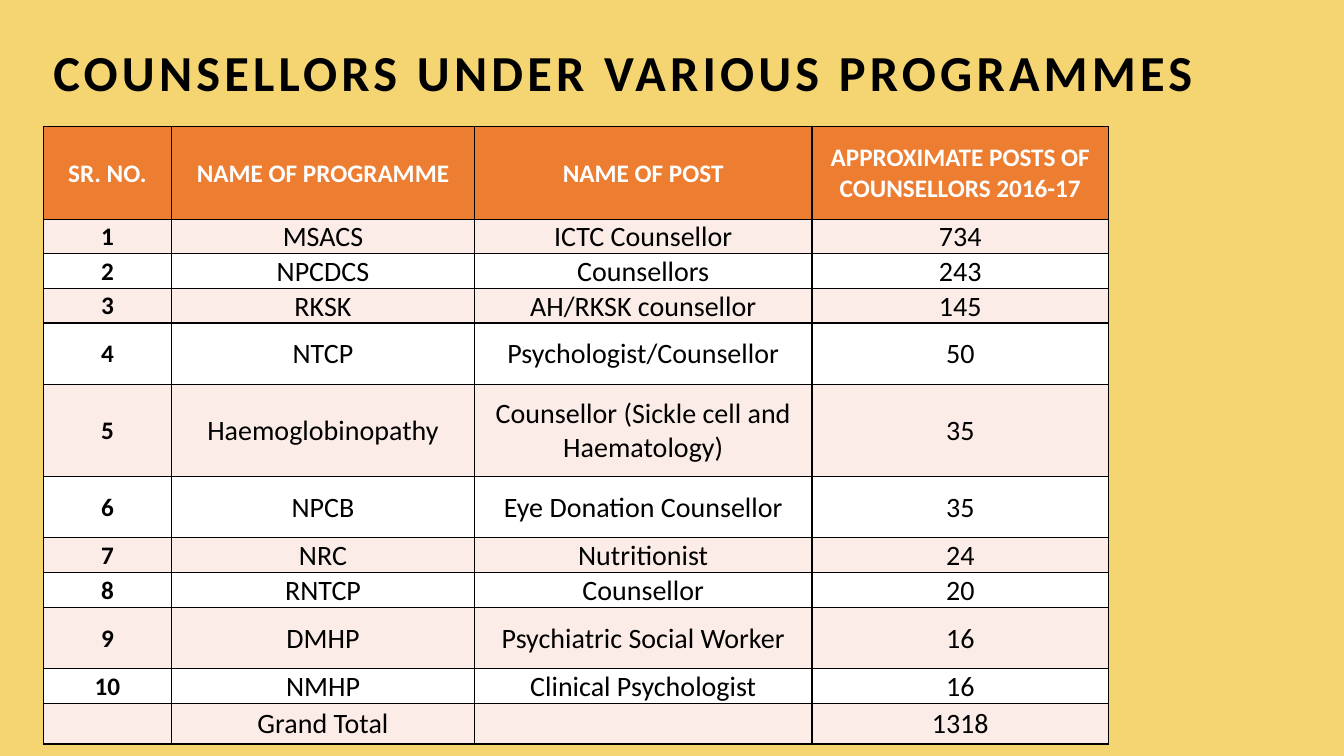
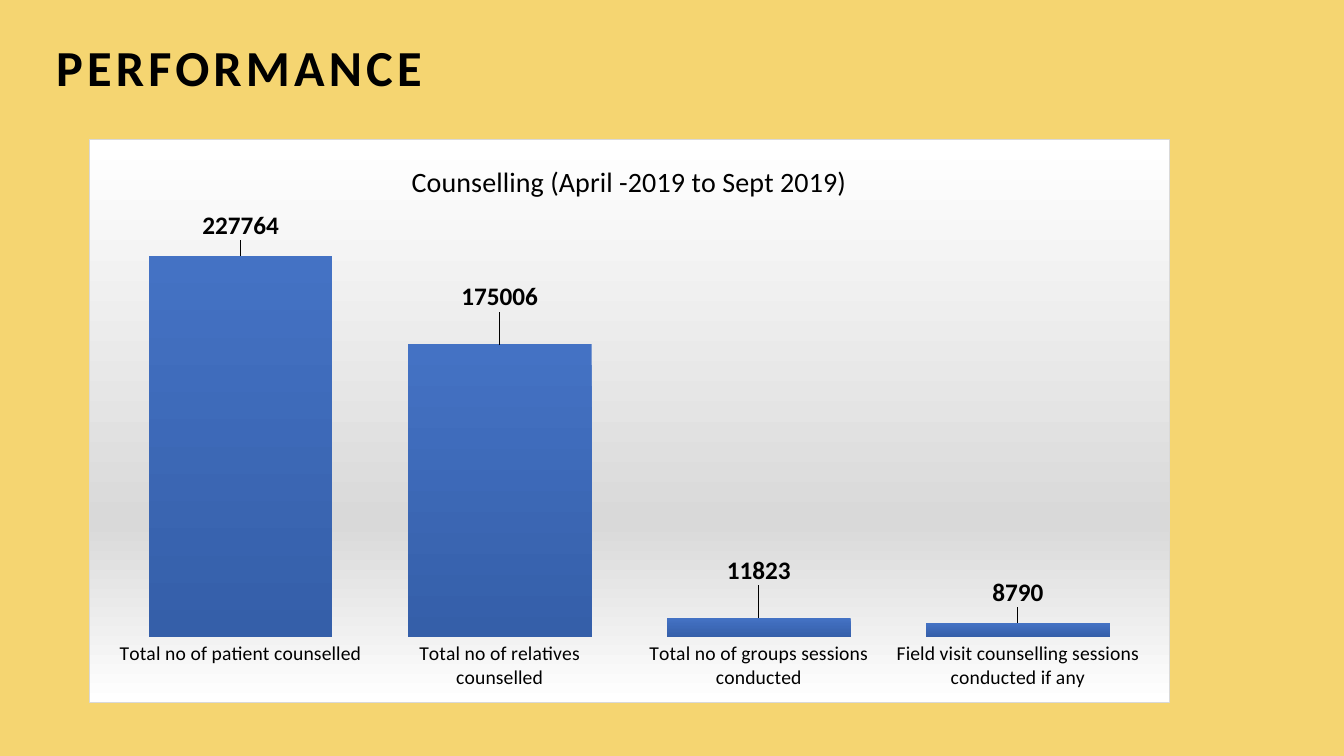
from lxml.etree import SubElement
from pptx import Presentation
from pptx.chart.data import CategoryChartData
from pptx.dml.color import RGBColor
from pptx.enum.chart import XL_CHART_TYPE, XL_LABEL_POSITION, XL_TICK_LABEL_POSITION, XL_TICK_MARK
from pptx.enum.text import MSO_ANCHOR, PP_ALIGN
from pptx.oxml import parse_xml
from pptx.oxml.ns import nsdecls, qn
from pptx.util import Pt

FONT = "Calibri"
COLORS = {
    "background": "F5D571", "text": "000000", "white": "FFFFFF",
    "header": "ED7D31", "band": "FCECE8",
    "bar_top": "4472C4", "bar_bottom": "355FA9", "grey": "D9D9D9",
}

PROGRAMMES_TITLE = "COUNSELLORS UNDER VARIOUS PROGRAMMES"
HEADER = ("SR. NO.", "NAME OF PROGRAMME", "NAME OF POST",
          "APPROXIMATE POSTS OF COUNSELLORS 2016-17")
PROGRAMMES = [
    ("1", "MSACS", "ICTC Counsellor", "734"),
    ("2", "NPCDCS", "Counsellors", "243"),
    ("3", "RKSK", "AH/RKSK counsellor", "145"),
    ("4", "NTCP", "Psychologist/Counsellor", "50"),
    ("5", "Haemoglobinopathy", "Counsellor (Sickle cell and Haematology)", "35"),
    ("6", "NPCB", "Eye Donation Counsellor", "35"),
    ("7", "NRC", "Nutritionist", "24"),
    ("8", "RNTCP", "Counsellor", "20"),
    ("9", "DMHP", "Psychiatric Social Worker", "16"),
    ("10", "NMHP", "Clinical Psychologist", "16"),
    ("", "Grand Total", "", "1318"),
]
COLUMN_WIDTHS = (91.5, 216.5, 241, 212)
ROW_HEIGHTS = (66, 22.5, 22.5, 22.5, 44, 65.5, 44, 22.5, 22.5, 44, 22.5, 29)

PERFORMANCE_TITLE = "PERFORMANCE"
CHART_TITLE = "Counselling (April -2019 to Sept 2019)"
# category, value, vertical label shift as a share of the chart height
COUNSELLING = [
    ("Total no of patient counselled", 227764, -0.02),
    ("Total no of relatives counselled", 175006, -0.05),
    ("Total no of groups sessions conducted", 11823, -0.05),
    ("Field visit counselling sessions conducted if any", 8790, -0.02),
]


def rgb(name):
    return RGBColor.from_string(COLORS[name])


def set_font(font, size, color="text", bold=False):
    font.name, font.size, font.bold = FONT, Pt(size), bold
    font.color.rgb = rgb(color)


def write_text(tf, text, size=20, color="text", bold=False, align=None, spacing=None):
    p = tf.paragraphs[0]
    p.alignment = align
    r = p.add_run()
    r.text = text
    set_font(r.font, size, color, bold)
    if spacing:
        r.font._element.set("spc", str(spacing * 100))


def add_titled_slide(prs, title, left, top, width):
    s = prs.slides.add_slide(prs.slide_layouts[6])
    tf = s.shapes.add_textbox(Pt(left), Pt(top), Pt(width), Pt(51)).text_frame
    tf.word_wrap = True
    write_text(tf, title, size=36, bold=True, spacing=3)
    return s


def add_borders(cell):
    tcPr = cell._tc.get_or_add_tcPr()
    for side in ("lnL", "lnR", "lnT", "lnB"):
        ln = SubElement(tcPr, qn(f"a:{side}"), w=str(Pt(1)))
        fill = SubElement(ln, qn("a:solidFill"))
        SubElement(fill, qn("a:srgbClr"), val=COLORS["text"])


def add_programme_table(s):
    rows = [HEADER, *PROGRAMMES]
    table = s.shapes.add_table(len(rows), len(HEADER), Pt(31), Pt(90.5),
                               Pt(sum(COLUMN_WIDTHS)), Pt(sum(ROW_HEIGHTS))).table
    table.horz_banding = False
    for column, width in zip(table.columns, COLUMN_WIDTHS):
        column.width = Pt(width)
    for i, (row, height) in enumerate(zip(rows, ROW_HEIGHTS)):
        table.rows[i].height = Pt(height)
        fill = "header" if i == 0 else "band" if i % 2 else "white"
        for j, text in enumerate(row):
            cell = table.cell(i, j)
            add_borders(cell)
            cell.fill.solid()
            cell.fill.fore_color.rgb = rgb(fill)
            cell.margin_left = cell.margin_right = cell.margin_top = Pt(0.72)
            cell.margin_bottom = 0
            cell.vertical_anchor = MSO_ANCHOR.MIDDLE
            if text:
                strong = i == 0 or j == 0
                write_text(cell.text_frame, text, size=18 if strong else 20, bold=strong,
                           color="text" if i else "white", align=PP_ALIGN.CENTER)


def gradient(*stops):
    """Vertical gradient fill from (percent, colour name) pairs."""
    gs = "".join(f'<a:gs pos="{pos * 1000}"><a:srgbClr val="{COLORS[name]}"/></a:gs>'
                 for pos, name in stops)
    return parse_xml(f'<a:gradFill {nsdecls("a")} rotWithShape="1"><a:gsLst>{gs}</a:gsLst>'
                     '<a:lin ang="5400000" scaled="0"/></a:gradFill>')


def manual_layout(**values):
    items = "".join(f'<c:{key} val="{value}"/>' for key, value in values.items())
    return parse_xml(f'<c:layout {nsdecls("c")}><c:manualLayout>{items}'
                     '</c:manualLayout></c:layout>')


def style_chart_area(chart):
    spPr = parse_xml(f'<c:spPr {nsdecls("c", "a")}><a:ln w="{Pt(0.75)}"><a:solidFill>'
                     f'<a:srgbClr val="{COLORS["grey"]}"/></a:solidFill></a:ln></c:spPr>')
    spPr.insert(0, gradient((0, "white"), (68, "grey"), (100, "white")))
    chart._chartSpace.find(qn("c:chart")).addnext(spPr)
    plot_area = chart._chartSpace.find(".//" + qn("c:plotArea"))
    for layout in plot_area.findall(qn("c:layout")):
        plot_area.remove(layout)
    plot_area.insert(0, manual_layout(layoutTarget="inner", xMode="edge", yMode="edge",
                                      x=0.02, y=0.14, w=0.96, h=0.745))


def add_counselling_chart(s):
    names, values, shifts = zip(*COUNSELLING)
    data = CategoryChartData()
    data.categories = names
    data.add_series("Series 1", values)
    chart = s.shapes.add_chart(XL_CHART_TYPE.COLUMN_CLUSTERED, Pt(63.5), Pt(99.5),
                               Pt(772), Pt(402.5), data).chart
    set_font(chart.font, 10)
    chart.has_legend = False
    chart.has_title = True
    write_text(chart.chart_title.text_frame, CHART_TITLE)
    chart.chart_title.include_in_layout = False
    style_chart_area(chart)

    axis = chart.category_axis
    axis.major_tick_mark = XL_TICK_MARK.NONE
    axis.format.line.fill.background()
    set_font(axis.tick_labels.font, 14)
    axis = chart.value_axis
    axis.minimum_scale, axis.maximum_scale = 0, 250000
    axis.has_major_gridlines = False
    axis.tick_label_position = XL_TICK_LABEL_POSITION.NONE
    axis.visible = False

    plot = chart.plots[0]
    plot.gap_width = 41
    plot.vary_by_categories = False
    series = plot.series[0]
    series._element.get_or_add_spPr().append(gradient((0, "bar_top"), (100, "bar_bottom")))
    for i, shift in enumerate(shifts):
        label = series.points[i].data_label
        set_font(label.font, 18, bold=True)
        label.position = XL_LABEL_POSITION.OUTSIDE_END
    for dLbl, shift in zip(series._element.iter(qn("c:dLbl")), shifts):
        dLbl.find(qn("c:idx")).addnext(manual_layout(x=0, y=shift))


def main():
    prs = Presentation()
    prs.slide_width, prs.slide_height = Pt(960), Pt(540)
    background = prs.slide_master.background.fill
    background.solid()
    background.fore_color.rgb = rgb("background")
    add_programme_table(add_titled_slide(prs, PROGRAMMES_TITLE, 31, 26, 920))
    add_counselling_chart(add_titled_slide(prs, PERFORMANCE_TITLE, 33, 22, 802))
    prs.save("out.pptx")


if __name__ == "__main__":
    main()
